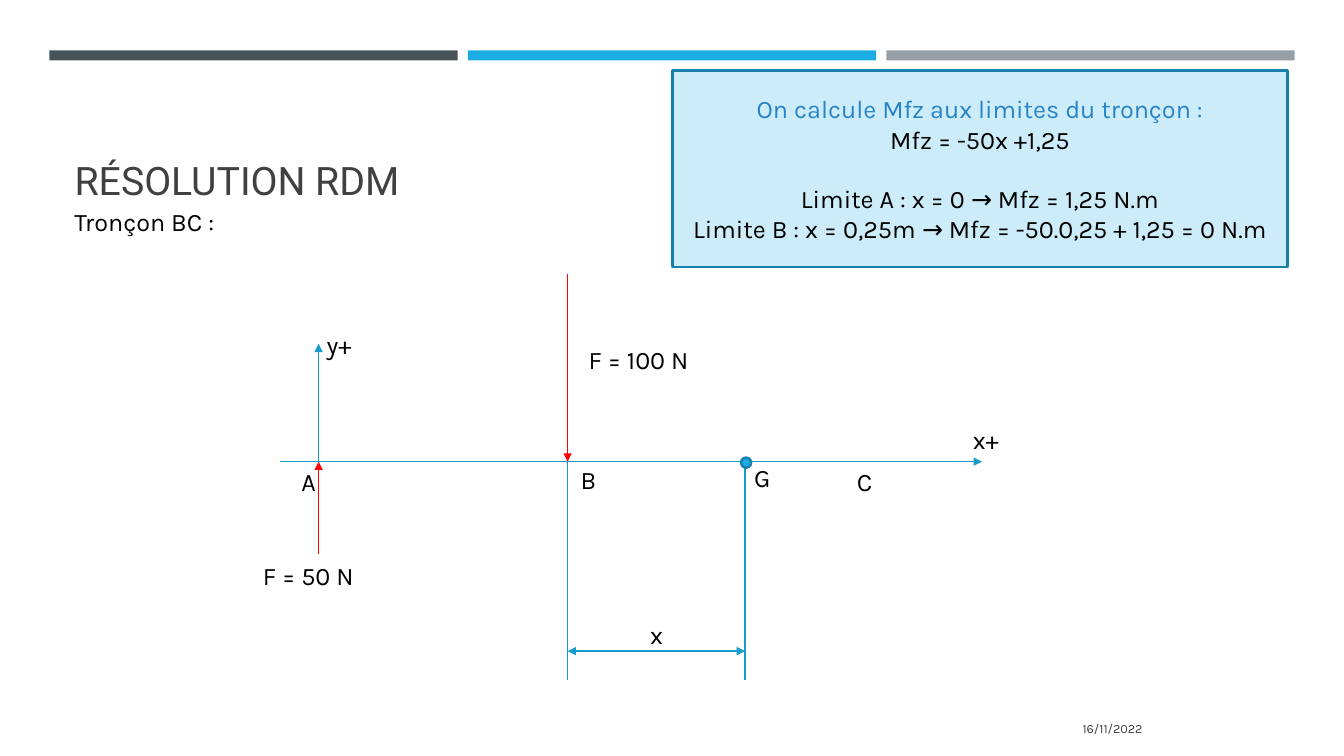
from dataclasses import dataclass

from lxml import etree
from pptx import Presentation
from pptx import util as u
from pptx.dml.color import RGBColor
from pptx.enum import shapes, text
from pptx.oxml.ns import qn

PX = 9144
BLACK, GREY = "000000", "404040"
BLUE, AXIS, OUTLINE, RED = "1CADE4", "189CCE", "1580A9", "FF0000"
BAND_LEFT, BAND_WIDTH, BAND_STEP = 49, 405, 415
AXIS_Y = 458
A_X, B_X, G_X = 316, 563, 739
DIMENSION_Y, DROP_END = 646, 675


@dataclass(frozen=True)
class Label:
    words: str
    left: int
    top: int
    width: int = 99
    size: int = 18
    colour: str = BLACK
    align: text.PP_ALIGN = text.PP_ALIGN.LEFT
    anchor: text.MSO_ANCHOR = text.MSO_ANCHOR.TOP


@dataclass(frozen=True)
class Segment:
    start: tuple[int, int]
    finish: tuple[int, int]
    colour: str = AXIS
    head: bool = False
    tail: bool = False


@dataclass(frozen=True)
class Line:
    words: str
    colour: str = BLACK
    space_before: int = 0


BANDS = ["465359", BLUE, "969FA7"]

SEGMENTS = [
    Segment((278, AXIS_Y), (889, AXIS_Y)),
    Segment((889, AXIS_Y), (974, AXIS_Y), tail=True),
    Segment((A_X, 550), (A_X, AXIS_Y), RED, tail=True),
    Segment((A_X, AXIS_Y), (A_X, 341), tail=True),
    Segment((B_X, 272), (B_X, AXIS_Y), RED, tail=True),
    Segment((B_X, AXIS_Y), (B_X, DROP_END)),
    Segment((G_X, AXIS_Y), (G_X, DROP_END)),
    Segment((B_X, DIMENSION_Y), (G_X, DIMENSION_Y), head=True, tail=True),
]

LABELS = [
    Label("16/11/2022", 832, 703, 311, 9, GREY,
          text.PP_ALIGN.RIGHT, text.MSO_ANCHOR.MIDDLE),
    Label("Tronçon BC :", 64, 200, 269),
    Label("A", 289, 458),
    Label("B", 566, 456),
    Label("G", 738, 454),
    Label("C", 840, 458),
    Label("F = 50 N", 251, 551, 137),
    Label("F = 100 N", 574, 337, 137),
    Label("x", 635, 609),
    Label("x+", 955, 416),
    Label("y+", 314, 322),
]

LIMITS = [
    Line("On calcule Mfz aux limites du tronçon :", "2683C6"),
    Line("Mfz = -50x +1,25"),
    Line("Limite A : x = 0 → Mfz = 1,25 N.m", space_before=21),
    Line("Limite B : x = 0,25m → Mfz = -50.0,25 + 1,25 = 0 N.m"),
]


def px(length: int) -> u.Emu:
    return u.Emu(length * PX)


def rgb(colour: str) -> RGBColor:
    return RGBColor.from_string(colour)


def add_run(paragraph, words: str, size: int, colour: str, face: str = "Karla") -> None:
    run = paragraph.add_run()
    run.text = words
    run.font.name = face
    run.font.size = u.Pt(size)
    run.font.color.rgb = rgb(colour)


def draw_shape(slide, kind: shapes.MSO_SHAPE, left: int, top: int, width: int,
               height: int, fill: str, outline: str = ""):
    shape = slide.shapes.add_shape(kind, px(left), px(top), px(width), px(height))
    shape.shadow.inherit = False
    shape.fill.solid()
    shape.fill.fore_color.rgb = rgb(fill)
    if outline:
        shape.line.color.rgb = rgb(outline)
        shape.line.width = u.Pt(1.75)
    else:
        shape.line.fill.background()
    return shape


def draw_segment(slide, segment: Segment) -> None:
    ends = [px(length) for length in segment.start + segment.finish]
    connector = slide.shapes.add_connector(shapes.MSO_CONNECTOR.STRAIGHT, *ends)
    connector.line.color.rgb = rgb(segment.colour)
    connector.line.width = u.Pt(1)
    outline = connector.line._get_or_add_ln()
    for tag, shown in (("a:headEnd", segment.head), ("a:tailEnd", segment.tail)):
        if shown:
            etree.SubElement(outline, qn(tag), type="triangle")
    etree.SubElement(connector._element.spPr, qn("a:effectLst"))


def draw_label(slide, label: Label) -> None:
    box = slide.shapes.add_textbox(px(label.left), px(label.top), px(label.width), px(40))
    frame = box.text_frame
    frame.word_wrap = True
    frame.vertical_anchor = label.anchor
    paragraph = frame.paragraphs[0]
    paragraph.alignment = label.align
    add_run(paragraph, label.words, label.size, label.colour)


def draw_title(slide) -> None:
    title = slide.shapes.title
    title.left, title.top, title.width, title.height = map(px, (64, 77, 1206, 130))
    frame = title.text_frame
    frame.word_wrap = True
    frame.auto_size = text.MSO_AUTO_SIZE.NONE
    frame.vertical_anchor = text.MSO_ANCHOR.BOTTOM
    frame.paragraphs[0].alignment = text.PP_ALIGN.LEFT
    add_run(frame.paragraphs[0], "RÉSOLUTION RDM", 28, GREY, "Roboto")


def draw_limits(slide) -> None:
    panel = draw_shape(slide, shapes.MSO_SHAPE.RECTANGLE, 667, 70, 610, 195, BLUE, OUTLINE)
    tint = panel._element.spPr.find(qn("a:solidFill")).find(qn("a:srgbClr"))
    etree.SubElement(tint, qn("a:alpha"), val="22000")
    frame = panel.text_frame
    frame.word_wrap = True
    frame.vertical_anchor = text.MSO_ANCHOR.MIDDLE
    for index, line in enumerate(LIMITS):
        paragraph = frame.add_paragraph() if index else frame.paragraphs[0]
        paragraph.alignment = text.PP_ALIGN.CENTER
        paragraph.space_before = u.Pt(line.space_before)
        add_run(paragraph, line.words, 18, line.colour)


def main() -> None:
    deck = Presentation()
    deck.slide_width, deck.slide_height = px(1333), px(750)
    slide = deck.slides.add_slide(deck.slide_layouts[5])
    for index, colour in enumerate(BANDS):
        draw_shape(slide, shapes.MSO_SHAPE.RECTANGLE, BAND_LEFT + index * BAND_STEP,
                   50, BAND_WIDTH, 10, colour)
    draw_title(slide)
    for segment in SEGMENTS:
        draw_segment(slide, segment)
    draw_shape(slide, shapes.MSO_SHAPE.OVAL, 735, 454, 10, 10, BLUE, OUTLINE)
    for label in LABELS:
        draw_label(slide, label)
    draw_limits(slide)
    deck.save("out.pptx")


if __name__ == "__main__":
    main()
